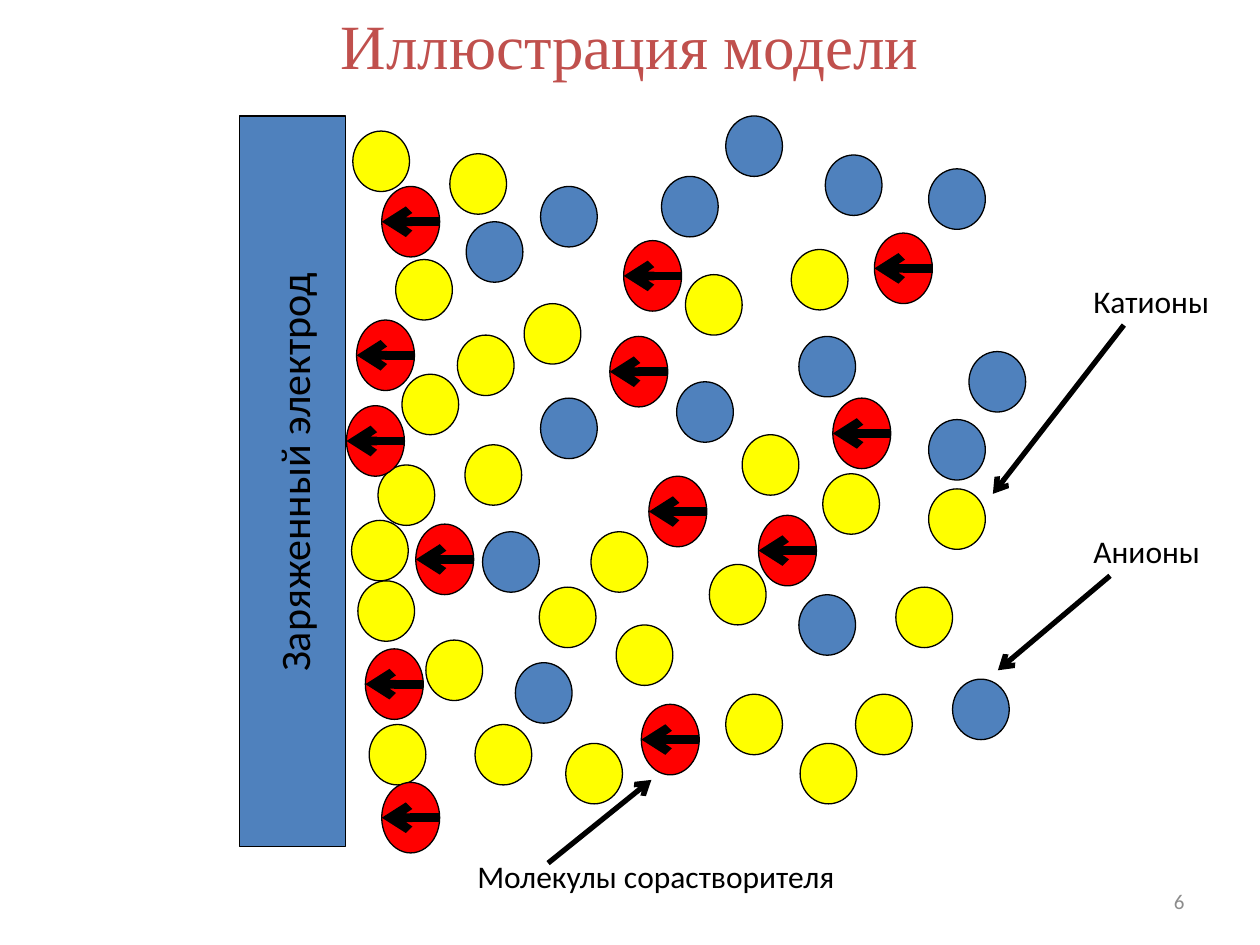
from typing import NamedTuple

import pptx
import pptx.dml.color
import pptx.enum.shapes
import pptx.enum.text
import pptx.oxml.ns
import pptx.util
from lxml import etree
from pptx.dml.color import RGBColor
from pptx.enum.shapes import MSO_SHAPE

EMU_PER_PX = 9144  # 100 px to the inch

BLACK = RGBColor(0x00, 0x00, 0x00)
YELLOW = RGBColor(0xFF, 0xFF, 0x00)
BLUE = RGBColor(0x4F, 0x81, 0xBD)
RED = RGBColor(0xFF, 0x00, 0x00)
TITLE_RED = RGBColor(0xC0, 0x50, 0x4D)
GRAY = RGBColor(0x8C, 0x8C, 0x8C)

ALIGN = pptx.enum.text.PP_ALIGN
ANCHOR = pptx.enum.text.MSO_ANCHOR


class Box(NamedTuple):
    left: int
    top: int
    width: int
    height: int


class Label(NamedTuple):
    text: str
    box: Box
    size: int = 18
    color: RGBColor = BLACK
    align: ALIGN = ALIGN.LEFT
    anchor: ANCHOR = ANCHOR.TOP
    rotation: int = 0


class Arrow(NamedTuple):
    start: tuple[int, int]
    end: tuple[int, int]
    weight: int = 3


TITLE_BOX = Box(0, 0, 1000, 71)
ELECTRODE_BOX = Box(190, 92, 84, 580)
ION_SIZE = (45, 48)
MOLECULE_SIZE = (46, 56)

# Left and top corner of each particle
YELLOW_IONS = [
    (280, 104), (314, 206), (319, 297), (279, 413), (357, 122), (338, 508),
    (284, 461), (293, 575), (300, 369), (737, 388), (544, 218), (563, 448),
    (628, 198), (589, 345), (377, 575), (635, 590), (428, 466), (576, 551),
    (653, 376), (679, 551), (711, 466), (363, 266), (469, 422), (489, 496),
    (449, 590), (416, 241), (369, 353),
]
BLUE_IONS = [
    (737, 134), (576, 92), (409, 526), (525, 140), (634, 472), (634, 267),
    (737, 333), (429, 316), (370, 176), (537, 303), (756, 539), (655, 123),
    (769, 279), (383, 422), (429, 148),
]
SOLVENT_MOLECULES = [
    (283, 254), (330, 416), (303, 621), (303, 148), (275, 322), (290, 515),
    (694, 185), (661, 316), (515, 378), (484, 267), (495, 191), (602, 409),
    (509, 559),
]

LABELS = [
    Label("Заряженный электрод", Box(-39, 350, 544, 50), size=24,
          align=ALIGN.CENTER, rotation=270),
    Label("Катионы", Box(858, 219, 142, 42)),
    Label("Анионы", Box(858, 417, 142, 42)),
    Label("Молекулы сорастворителя", Box(369, 675, 327, 40)),
    Label("6", Box(717, 695, 233, 40), size=12, color=GRAY,
          align=ALIGN.RIGHT, anchor=ANCHOR.MIDDLE),
]
POINTERS = [
    Arrow((892, 258), (788, 392)),
    Arrow((881, 457), (792, 532)),
    Arrow((435, 685), (517, 619)),
]


def px(length: int) -> pptx.util.Emu:
    return pptx.util.Emu(length * EMU_PER_PX)


def add_filled_shape(slide, kind: MSO_SHAPE, box: Box, color: RGBColor) -> None:
    shape = slide.shapes.add_shape(kind, *map(px, box))
    shape.shadow.inherit = False
    shape.fill.solid()
    shape.fill.fore_color.rgb = color
    shape.line.color.rgb = BLACK
    shape.line.width = pptx.util.Pt(0.75)


def add_arrow(slide, arrow: Arrow) -> None:
    connector = slide.shapes.add_connector(
        pptx.enum.shapes.MSO_CONNECTOR.STRAIGHT,
        *map(px, arrow.start), *map(px, arrow.end))
    connector.line.color.rgb = BLACK
    connector.line.width = pptx.util.Pt(arrow.weight)
    qn = pptx.oxml.ns.qn
    etree.SubElement(connector.line._get_or_add_ln(), qn("a:tailEnd"), type="arrow")
    etree.SubElement(connector._element.spPr, qn("a:effectLst"))


def add_molecule(slide, left: int, top: int) -> None:
    """Draw a solvent molecule with its dipole arrow pointing at the electrode."""
    width, height = MOLECULE_SIZE
    add_filled_shape(slide, MSO_SHAPE.OVAL, Box(left, top, width, height), RED)
    middle = top + height // 2
    add_arrow(slide, Arrow((left + width, middle), (left, middle), weight=5))


def format_text(shape, text: str, font_name: str, size: int, color: RGBColor,
                align: ALIGN) -> None:
    shape.text_frame.text = text
    paragraph = shape.text_frame.paragraphs[0]
    paragraph.alignment = align
    font = paragraph.runs[0].font
    font.name = font_name
    font.size = pptx.util.Pt(size)
    font.color.rgb = color


def add_label(slide, label: Label) -> None:
    shape = slide.shapes.add_textbox(*map(px, label.box))
    shape.rotation = label.rotation
    shape.text_frame.word_wrap = True
    shape.text_frame.vertical_anchor = label.anchor
    format_text(shape, label.text, "Calibri", label.size, label.color, label.align)


def set_title(slide, text: str) -> None:
    title = slide.shapes.title
    title.left, title.top, title.width, title.height = map(px, TITLE_BOX)
    title.text_frame.auto_size = pptx.enum.text.MSO_AUTO_SIZE.NONE
    title.text_frame.vertical_anchor = ANCHOR.TOP
    format_text(title, text, "Times New Roman", 36, TITLE_RED, ALIGN.CENTER)


def main() -> None:
    presentation = pptx.Presentation()
    presentation.slide_width = px(1000)
    presentation.slide_height = px(750)
    slide = presentation.slides.add_slide(
        presentation.slide_layouts.get_by_name("Title Only"))

    set_title(slide, "Иллюстрация модели")
    add_filled_shape(slide, MSO_SHAPE.RECTANGLE, ELECTRODE_BOX, BLUE)
    for color, corners in ((YELLOW, YELLOW_IONS), (BLUE, BLUE_IONS)):
        for corner in corners:
            add_filled_shape(slide, MSO_SHAPE.OVAL, Box(*corner, *ION_SIZE), color)
    for left, top in SOLVENT_MOLECULES:
        add_molecule(slide, left, top)
    for label in LABELS:
        add_label(slide, label)
    for pointer in POINTERS:
        add_arrow(slide, pointer)

    presentation.save("out.pptx")


if __name__ == "__main__":
    main()
